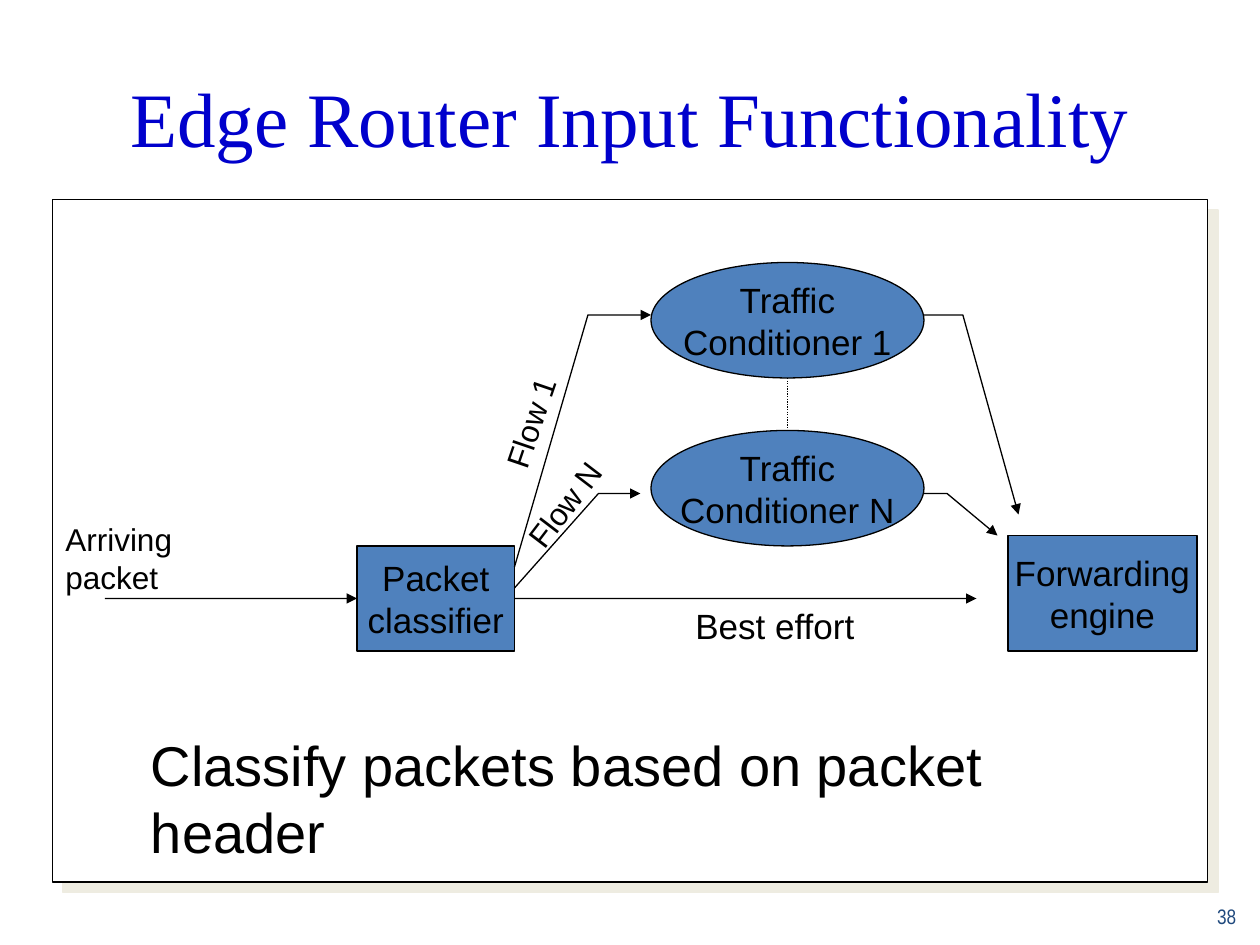
from lxml.etree import SubElement
from pptx import Presentation
from pptx.dml.color import RGBColor
from pptx.enum.dml import MSO_LINE
from pptx.enum.shapes import MSO_CONNECTOR, MSO_SHAPE
from pptx.enum.text import MSO_ANCHOR, PP_ALIGN
from pptx.oxml.ns import qn
from pptx.util import Inches, Pt

COLUMNS, ROWS = 120, 90
BLACK, WHITE, BLUE = "000000", "FFFFFF", "4F81BD"


def grid(*cells):
    """Turn counts of twelfth-inch cells into lengths."""
    return [Inches(cell / 12) for cell in cells]


def color(value):
    """Turn a hex string into a colour."""
    return RGBColor.from_string(value)


def write(frame, lines, size, font="Arial", ink=BLACK, align=PP_ALIGN.LEFT, anchor=MSO_ANCHOR.TOP, wrap=False):
    """Fill a text frame with one paragraph for each line."""
    frame.word_wrap = wrap
    frame.vertical_anchor = anchor
    for index, line in enumerate(lines):
        paragraph = frame.add_paragraph() if index else frame.paragraphs[0]
        paragraph.alignment = align
        run = paragraph.add_run()
        run.text = line
        run.font.size = Pt(size)
        run.font.name = font
        run.font.color.rgb = color(ink)


def add_label(slide, box, lines, size, rotation=0, **style):
    """Add a text box placed in inches."""
    label = slide.shapes.add_textbox(*map(Inches, box))
    label.rotation = rotation
    write(label.text_frame, lines, size, **style)


def outline(shape):
    """Give a shape or connector a thin black line."""
    shape.line.color.rgb = color(BLACK)
    shape.line.width = Pt(0.75)


def add_arrowhead(shape):
    """End a line with a triangle."""
    SubElement(shape.line._get_or_add_ln(), qn("a:tailEnd"), type="triangle")


def add_node(slide, kind, cells, lines=(), fill=BLUE):
    """Add an outlined shape with centred text."""
    node = slide.shapes.add_shape(kind, *grid(*cells))
    node.shadow.inherit = False
    node.fill.solid()
    node.fill.fore_color.rgb = color(fill)
    outline(node)
    write(node.text_frame, lines, 20, align=PP_ALIGN.CENTER, anchor=MSO_ANCHOR.MIDDLE)
    return node


def add_panel(slide):
    """Add the white panel with its offset shadow."""
    panel = add_node(slide, MSO_SHAPE.RECTANGLE, (5, 19, 110, 65), fill=WHITE)
    effects = panel._element.spPr.find(qn("a:effectLst"))
    shadow = SubElement(effects, qn("a:outerShdw"), dist=str(Pt(8.5)), dir=str(45 * 60000), algn="ctr", rotWithShape="0")
    SubElement(shadow, qn("a:srgbClr"), val="EEECE1")


def add_line(slide, start, end):
    """Add a straight connector between two grid points."""
    line = slide.shapes.add_connector(MSO_CONNECTOR.STRAIGHT, *grid(*start, *end))
    outline(line)
    SubElement(line._element.spPr, qn("a:effectLst"))
    return line


def add_bent_arrow(slide, start, *points):
    """Add an open path through grid points that ends in an arrowhead."""
    builder = slide.shapes.build_freeform(*grid(*start))
    builder.add_line_segments([grid(*point) for point in points], close=False)
    arrow = builder.convert_to_shape()
    arrow.shadow.inherit = False
    arrow.fill.background()
    outline(arrow)
    add_arrowhead(arrow)


def add_title(slide, text):
    """Place and format the title placeholder."""
    title = slide.shapes.title
    title.left, title.top, title.width, title.height = map(Inches, (0.5, 0.3, 9, 1.25))
    write(title.text_frame, [text], 44, "Times New Roman", "0000CC", PP_ALIGN.CENTER, MSO_ANCHOR.MIDDLE, True)


def add_router(slide):
    """Draw the nodes and the flows between them."""
    classifier = add_node(slide, MSO_SHAPE.RECTANGLE, (34, 52, 15, 10), ["Packet", "classifier"])
    for name, row in (("1", 25), ("N", 41)):
        add_node(slide, MSO_SHAPE.OVAL, (62, row, 26, 11), ["Traffic", f"Conditioner {name}"])
    add_node(slide, MSO_SHAPE.RECTANGLE, (96, 51, 18, 11), ["Forwarding", "engine"])

    arriving = add_line(slide, (10, 57), (34, 57))
    arriving.end_connect(classifier, 1)
    best_effort = add_line(slide, (49, 57), (93, 57))
    best_effort.begin_connect(classifier, 3)
    for arrow in (arriving, best_effort):
        add_arrowhead(arrow)
    add_line(slide, (75, 36), (75, 41)).line.dash_style = MSO_LINE.ROUND_DOT

    add_bent_arrow(slide, (49, 54), (56, 30), (62, 30))
    add_bent_arrow(slide, (49, 56), (57, 47), (61, 47))
    add_bent_arrow(slide, (88, 47), (90.2, 47), (95, 51))
    add_bent_arrow(slide, (88, 30), (91.7, 30), (97, 49))


def main():
    """Build and save the slide."""
    presentation = Presentation()
    presentation.slide_width, presentation.slide_height = grid(COLUMNS, ROWS)
    slide = presentation.slides.add_slide(presentation.slide_layouts[5])
    add_title(slide, "Edge Router Input Functionality")
    add_panel(slide)
    add_router(slide)
    add_label(slide, (0.42, 4.08, 1.05, 0.7), ["Arriving", "packet"], 18)
    add_label(slide, (5.42, 4.75, 1.47, 0.43), ["Best effort"], 20)
    add_label(slide, (3.74, 3.15, 0.94, 0.4), ["Flow 1"], 18, 288.8)
    add_label(slide, (3.99, 3.8, 0.98, 0.4), ["Flow N"], 18, 307.4)
    add_label(slide, (1.1, 5.75, 8, 1.17), ["Classify packets based on packet header"], 32, wrap=True)
    add_label(slide, (7.83, 6.92, 2.08, 0.5), ["38"], 12, font="Arial Narrow", ink="1F497D",
              align=PP_ALIGN.RIGHT, anchor=MSO_ANCHOR.BOTTOM, wrap=True)
    presentation.save("out.pptx")


if __name__ == "__main__":
    main()
